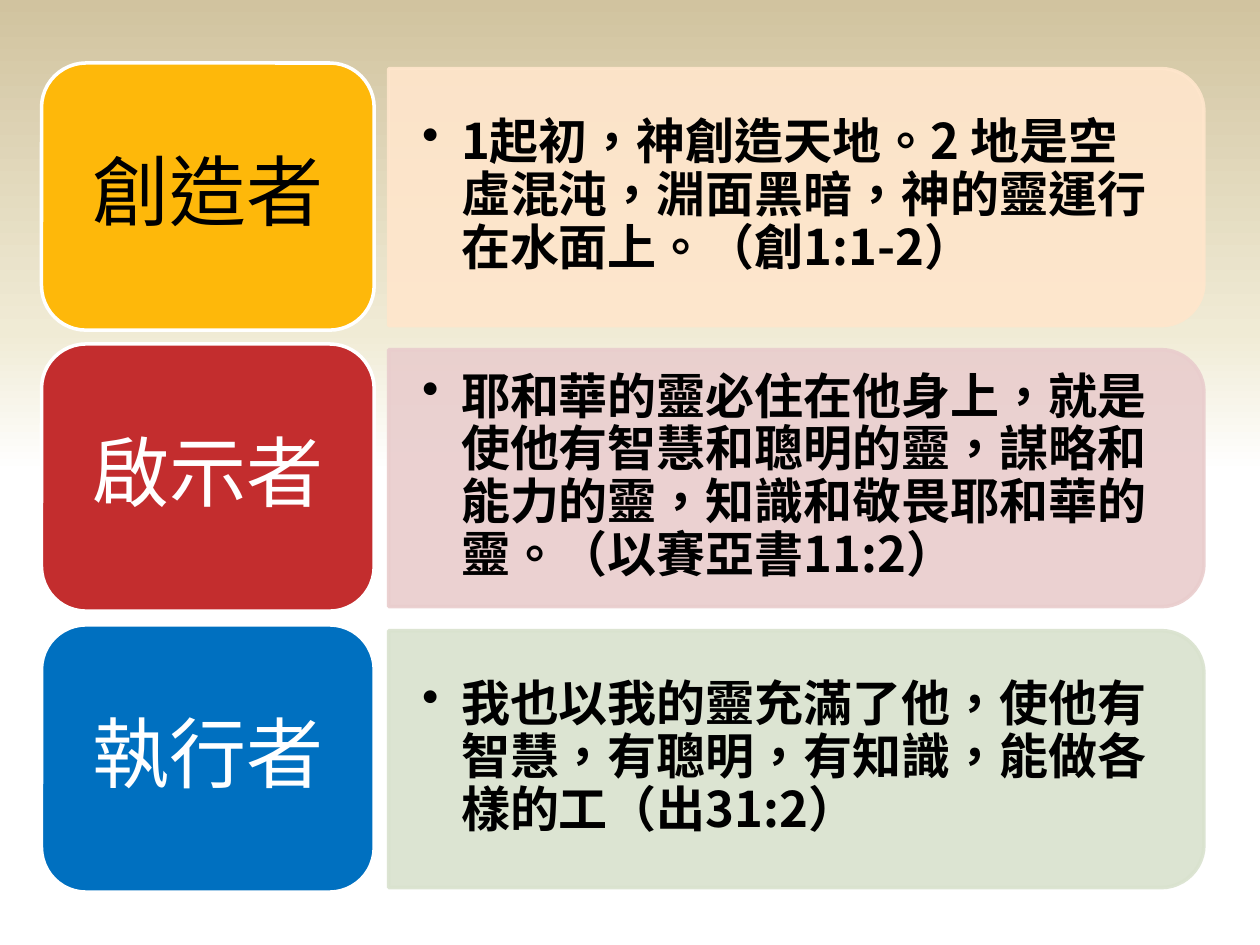
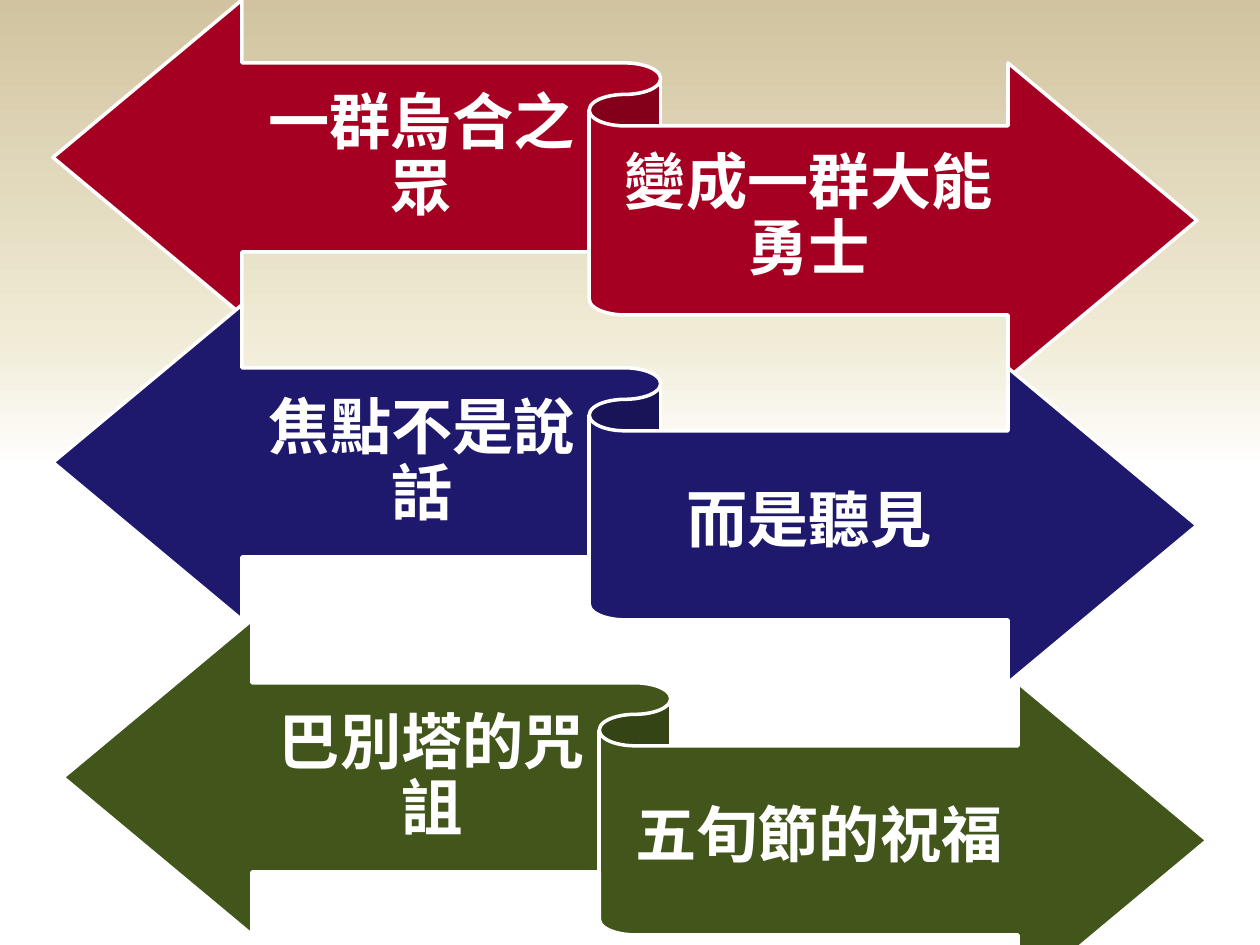
from copy import deepcopy

from lxml import etree
from pptx import Presentation
from pptx.dml.color import RGBColor
from pptx.enum import shapes, text
from pptx.oxml import ns
from pptx.util import Inches, Pt

BLACK = RGBColor(0x00, 0x00, 0x00)
WHITE = RGBColor(0xFF, 0xFF, 0xFF)
CREAM = RGBColor(0xF0, 0xEB, 0xD5)
SAND = RGBColor(0xD1, 0xC3, 0x9F)
AMBER = RGBColor(0xFE, 0xB8, 0x0A)
RED = RGBColor(0xC3, 0x2D, 0x2E)
BLUE = RGBColor(0x00, 0x70, 0xC0)
PEACH = RGBColor(0xFF, 0xE6, 0xCC)
PINK = RGBColor(0xE9, 0xCD, 0xCD)
SAGE = RGBColor(0xD9, 0xE2, 0xCE)
CRIMSON = RGBColor(0xA5, 0x00, 0x21)
NAVY = RGBColor(0x1F, 0x19, 0x6D)
OLIVE = RGBColor(0x42, 0x55, 0x1A)
SANS = "Noto Sans CJK SC"
LABEL_FONT = "Calibri"


def add_text(slide, words, box, size, color, font=SANS, bold=True,
             insets=(0, 0.14, 0, 0.15), bullet=False):
    frame = slide.shapes.add_textbox(*map(Inches, box)).text_frame
    frame.word_wrap = True
    frame.vertical_anchor = text.MSO_ANCHOR.MIDDLE
    frame.margin_left, frame.margin_top, frame.margin_right, frame.margin_bottom = map(Inches, insets)
    paragraph = frame.paragraphs[0]
    paragraph.line_spacing = 0.9
    if bullet:
        paragraph.level = 1
        paragraph.alignment = text.PP_ALIGN.LEFT
        properties = paragraph._p.get_or_add_pPr()
        properties.set("marL", str(Inches(0.31)))
        properties.set("indent", str(-Inches(0.31)))
        etree.SubElement(properties, ns.qn("a:buChar"), char="•")
    else:
        paragraph.alignment = text.PP_ALIGN.CENTER
    run = paragraph.add_run()
    run.text = words
    run.font.size = Pt(size)
    run.font.bold = bold
    run.font.color.rgb = color
    run.font.name = font
    run_properties = run._r.get_or_add_rPr()
    run_properties.set("lang", "zh-TW")
    etree.SubElement(run_properties, ns.qn("a:ea"), typeface=font)


def add_panel(slide, preset, box, fill, line=WHITE, opacity=None):
    panel = slide.shapes.add_shape(preset, *map(Inches, box))
    panel.shadow.inherit = False
    panel.fill.solid()
    panel.fill.fore_color.rgb = fill
    panel.line.color.rgb = line
    panel.line.width = Pt(2)
    if opacity:
        for color in panel._element.spPr.iter(ns.qn("a:srgbClr")):
            etree.SubElement(color, ns.qn("a:alpha"), val=str(opacity * 1000))
    return panel


deck = Presentation()
deck.slide_width = Inches(10)
deck.slide_height = Inches(7.5)

master = deck.slide_master
backdrop = master.background.fill
backdrop.gradient()
backdrop.gradient_angle = 90
stop_list = master.element.find(".//" + ns.qn("a:gsLst"))
stop_list.append(deepcopy(stop_list[-1]))
for stop, position, color in zip(backdrop.gradient_stops, (0.5, 0.65, 1), (WHITE, CREAM, SAND)):
    stop.position = position
    stop.color.rgb = color

blank = deck.slide_layouts[6]

roles = [
    ("創造者", AMBER, BLACK, PEACH,
     "1起初，神創造天地。2 地是空虛混沌，淵面黑暗，神的靈運行在水面上。（創1:1-2）"),
    ("啟示者", RED, WHITE, PINK,
     "耶和華的靈必住在他身上，就是使他有智慧和聰明的靈，謀略和能力的靈，知識和敬畏耶和華的靈。（以賽亞書11:2）"),
    ("執行者", BLUE, WHITE, SAGE,
     "我也以我的靈充滿了他，使他有智慧，有聰明，有知識，能做各樣的工（出31:2）"),
]
roles_slide = deck.slides.add_slide(blank)
for row, (role, role_fill, role_color, verse_fill, verse) in enumerate(roles):
    top = 0.5 + 2.23 * row
    verse_panel = add_panel(roles_slide, shapes.MSO_SHAPE.ROUND_2_SAME_RECTANGLE,
                            (5.3, top - 2.17, 2.04, 6.47), verse_fill, verse_fill, opacity=90)
    verse_panel.rotation = 90
    add_text(roles_slide, verse, (3.08, top + 0.14, 6.37, 1.84), 28, BLACK,
             insets=(0.27, 0.14, 0.27, 0.14), bullet=True)
    add_panel(roles_slide, shapes.MSO_SHAPE.ROUNDED_RECTANGLE, (0.33, top, 2.64, 2.12), role_fill)
    add_text(roles_slide, role, (0.44, top + 0.1, 2.43, 1.91), 44, role_color,
             font=LABEL_FONT, bold=False, insets=(0.18, 0.09, 0.18, 0.09))

changes = [
    (0.42, 0, CRIMSON, "一群烏合之眾", 1.52, 2.81, "變成一群大能勇士"),
    (0.42, 2.42, NAVY, "焦點不是說話", 1.69, 2.48, "而是聽見"),
    (0.5, 4.92, OLIVE, "巴別塔的咒詛", 1.69, 2.48, "五旬節的祝福"),
]
changes_slide = deck.slides.add_slide(blank)
for left, top, ribbon_fill, before, before_offset, before_width, after in changes:
    add_panel(changes_slide, shapes.MSO_SHAPE.LEFT_RIGHT_RIBBON, (left, top, 9.08, 3), ribbon_fill)
    add_text(changes_slide, before, (left + before_offset, top + 0.52, before_width, 1.47), 35, WHITE)
    add_text(changes_slide, after, (left + 4.54, top + 1, 2.92, 1.47), 35, WHITE)

deck.save("out.pptx")
